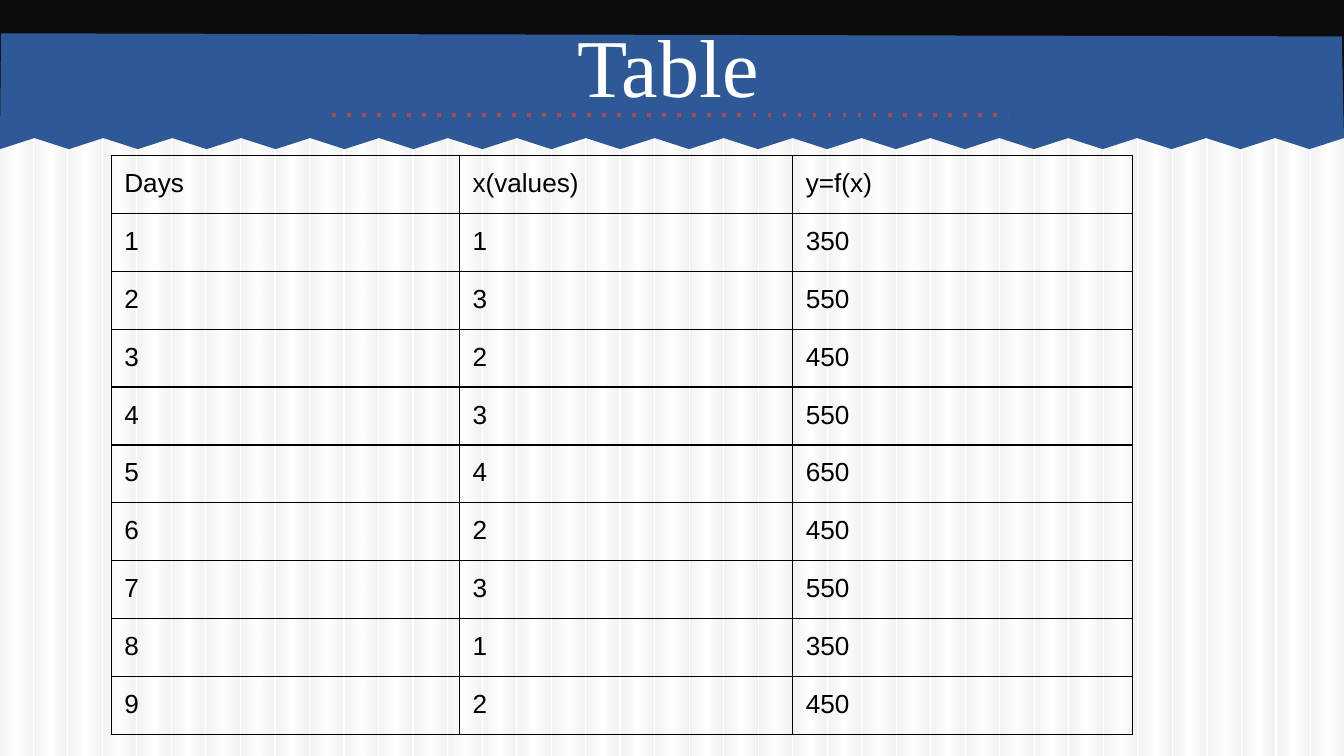
import pptx
import pptx.dml.color
import pptx.enum.dml
import pptx.enum.shapes
import pptx.enum.text
import pptx.oxml
import pptx.oxml.ns
import pptx.util

Cm = pptx.util.Cm
Pt = pptx.util.Pt
qn = pptx.oxml.ns.qn
NAMESPACE = pptx.oxml.ns.nsdecls("a")

TITLE = "Table"
HEADER = ("Days", "x(values)", "y=f(x)")
X_VALUES = (1, 3, 2, 3, 4, 2, 3, 1, 2)
Y_VALUES = (350, 550, 450, 550, 650, 450, 550, 350, 450)
ROWS = [HEADER, *zip(range(1, 10), X_VALUES, Y_VALUES)]

WIDTH, HEIGHT = 25.4, 14.29
STRIPE_COUNT, STRIPE_WIDTH = 39, 0.61
STRIPE_STOPS = ((0, "BFBFBF"), (50, "FFFFFF"), (97, "BFBFBF"), (100, "BFBFBF"))
STRIPE_OPACITY = 19
TOOTH_COUNT, TOOTH_TOP, TOOTH_BOTTOM = 39, 2.61, 2.82
COLUMN_WIDTHS = (6.58, 6.3, 6.42)
ROW_HEIGHT = 1.06


def color(value):
    return pptx.dml.color.RGBColor.from_string(value)


def style_text(paragraph, font_name, size, font_color):
    paragraph.font.name = font_name
    paragraph.font.size = Pt(size)
    paragraph.font.color.rgb = color(font_color)


def add_rectangle(slide, left, top, width, height):
    shape = slide.shapes.add_shape(
        pptx.enum.shapes.MSO_SHAPE.RECTANGLE, Cm(left), Cm(top), Cm(width), Cm(height)
    )
    shape.shadow.inherit = False
    shape.line.fill.background()
    return shape


def fill_solid(shape, value):
    shape.fill.solid()
    shape.fill.fore_color.rgb = color(value)


def add_stripes(slide):
    pitch = (WIDTH - STRIPE_WIDTH) / (STRIPE_COUNT - 1)
    stops = "".join(
        f'<a:gs pos="{position * 1000}"><a:srgbClr val="{value}">'
        f'<a:alpha val="{STRIPE_OPACITY * 1000}"/></a:srgbClr></a:gs>'
        for position, value in STRIPE_STOPS
    )
    gradient = (
        f'<a:gradFill {NAMESPACE} rotWithShape="1"><a:gsLst>{stops}</a:gsLst>'
        '<a:lin ang="0" scaled="0"/></a:gradFill>'
    )
    for index in range(STRIPE_COUNT):
        stripe = add_rectangle(slide, index * pitch, 0.02, STRIPE_WIDTH, HEIGHT)
        geometry = stripe._element.spPr.find(qn("a:prstGeom"))
        geometry.addnext(pptx.oxml.parse_xml(gradient))


def add_banner(slide):
    fill_solid(add_rectangle(slide, 0, 0, WIDTH, 2.59), "0C0C0C")
    teeth = [
        (WIDTH * (1 - index / TOOTH_COUNT), TOOTH_BOTTOM if index % 2 else TOOTH_TOP)
        for index in range(TOOTH_COUNT + 1)
    ]
    outline = [(0.02, 0.63), (25.36, 0.69), *teeth]
    points = [(Cm(x), Cm(y)) for x, y in outline]
    builder = slide.shapes.build_freeform(*points[0])
    builder.add_line_segments(points[1:], close=True)
    banner = builder.convert_to_shape()
    banner.shadow.inherit = False
    banner.line.fill.background()
    fill_solid(banner, "2F5897")


def add_dotted_line(slide):
    connector = slide.shapes.add_connector(
        pptx.enum.shapes.MSO_CONNECTOR.STRAIGHT, Cm(6.27), Cm(2.18), Cm(19.05), Cm(2.18)
    )
    connector.line.color.rgb = color("9C5252")
    connector.line.width = Pt(2)
    connector.line.dash_style = pptx.enum.dml.MSO_LINE.ROUND_DOT
    properties = connector._element.spPr
    properties.find(qn("a:ln")).find(qn("a:prstDash")).set("val", "dot")
    properties.append(pptx.oxml.parse_xml(f"<a:effectLst {NAMESPACE}/>"))


def add_title(slide):
    title = slide.shapes.add_textbox(Cm(1.2), Cm(0.03), Cm(22.86), Cm(2.39))
    frame = title.text_frame
    frame.word_wrap = True
    frame.vertical_anchor = pptx.enum.text.MSO_ANCHOR.MIDDLE
    paragraph = frame.paragraphs[0]
    paragraph.text = TITLE
    paragraph.alignment = pptx.enum.text.PP_ALIGN.CENTER
    style_text(paragraph, "Times New Roman", 44, "FFFFFF")


def add_borders(cell):
    properties = cell._tc.get_or_add_tcPr()
    for side in ("lnL", "lnR", "lnT", "lnB"):
        properties.append(pptx.oxml.parse_xml(
            f'<a:{side} {NAMESPACE} w="{Pt(0.75)}"><a:solidFill>'
            f'<a:srgbClr val="000000"/></a:solidFill></a:{side}>'
        ))


def add_values_table(slide):
    table = slide.shapes.add_table(
        len(ROWS), len(HEADER), Cm(2.1), Cm(2.94),
        Cm(sum(COLUMN_WIDTHS)), Cm(ROW_HEIGHT * len(ROWS)),
    ).table
    table.first_row = False
    table.horz_banding = False
    for column, width in zip(table.columns, COLUMN_WIDTHS):
        column.width = Cm(width)
    for row, values in zip(table.rows, ROWS):
        row.height = Cm(ROW_HEIGHT)
        for cell, value in zip(row.cells, values):
            add_borders(cell)
            cell.fill.background()
            cell.margin_left = cell.margin_right = Cm(0.25)
            cell.margin_top = cell.margin_bottom = Cm(0.25)
            paragraph = cell.text_frame.paragraphs[0]
            paragraph.text = str(value)
            style_text(paragraph, "Arial", 14, "000000")


def main():
    presentation = pptx.Presentation()
    presentation.slide_width = Cm(WIDTH)
    presentation.slide_height = Cm(HEIGHT)
    slide = presentation.slides.add_slide(presentation.slide_layouts[6])
    add_stripes(slide)
    add_banner(slide)
    add_dotted_line(slide)
    add_title(slide)
    add_values_table(slide)
    presentation.save("out.pptx")


if __name__ == "__main__":
    main()
